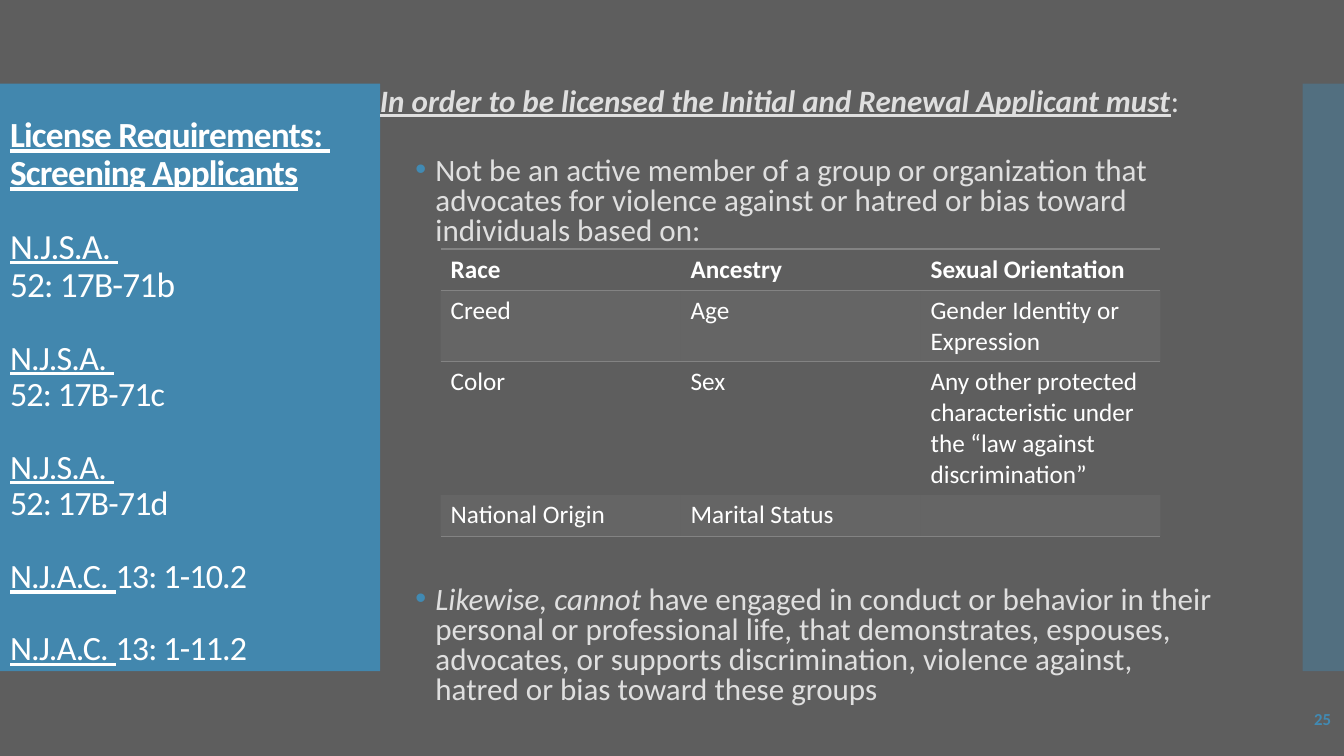
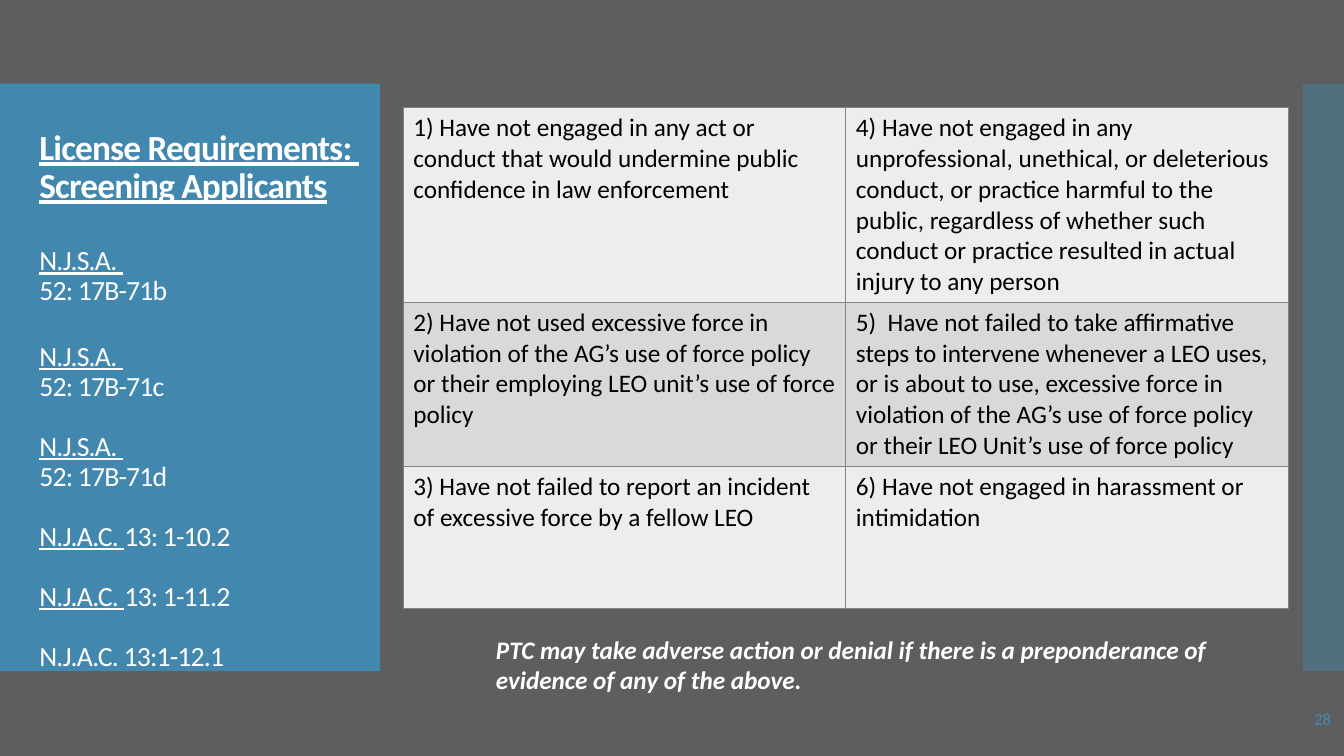
from lxml import etree
from pptx import Presentation
from pptx.dml.color import RGBColor
from pptx.enum import shapes, text
from pptx.oxml.ns import qn
from pptx.util import Inches, Pt

FONT = "Calibri"
GREY = RGBColor(0x5E, 0x5E, 0x5E)
BLUE = RGBColor(0x41, 0x8A, 0xB3)
WHITE = RGBColor(0xFF, 0xFF, 0xFF)
BLACK = RGBColor(0, 0, 0)
PALE = RGBColor(0xDF, 0xDF, 0xDF)
RULE = RGBColor(0x83, 0x83, 0x83)
CELL_LIGHT = RGBColor(0xED, 0xED, 0xED)
CELL_DARK = RGBColor(0xD9, 0xD9, 0xD9)
NO_TABLE_STYLE = "{2D5ABB26-0587-4C30-8999-92F81FD0307C}"

BAND_TOP, BAND_HEIGHT = 0.83, 5.83
BODY_SIZE = 22.2
TITLE_SIZE = 25.2

CITATIONS = [
    ("N.J.S.A. ", "52: 17B-71b"),
    ("N.J.S.A. ", "52: 17B-71c"),
    ("N.J.S.A. ", "52: 17B-71d"),
    ("N.J.A.C. ", "13: 1-10.2"),
    ("N.J.A.C. ", "13: 1-11.2"),
]

BIAS_GROUNDS = [
    ["Race", "Ancestry", "Sexual Orientation"],
    ["Creed", "Age", "Gender Identity or Expression"],
    ["Color", "Sex", "Any other protected characteristic under the “law against discrimination”"],
    ["National Origin", "Marital Status", ""],
]

CONDUCT = [
    ["1) Have not engaged in any act or conduct that would undermine public "
     "confidence in law enforcement",
     "4) Have not engaged in any unprofessional, unethical, or deleterious conduct, "
     "or practice harmful to the public, regardless of whether such conduct or "
     "practice resulted in actual injury to any person"],
    ["2) Have not used excessive force in violation of the AG’s use of force policy "
     "or their employing LEO unit’s use of force policy",
     "5)  Have not failed to take affirmative steps to intervene whenever a LEO uses, "
     "or is about to use, excessive force in violation of the AG’s use of force "
     "policy or their LEO Unit’s use of force policy"],
    ["3) Have not failed to report an incident of excessive force by a fellow LEO",
     "6) Have not engaged in harassment or intimidation"],
]


def add_run(paragraph, words, size, color, bold=False, italic=False, underline=False):
    run = paragraph.add_run()
    run.text = words
    font = run.font
    font.name, font.size, font.color.rgb = FONT, Pt(size), color
    font.bold, font.italic, font.underline = bold, italic, underline
    return run


def set_alpha(properties, percent):
    """Make the first colour inside the given properties element translucent."""
    color = properties.find(".//" + qn("a:srgbClr"))
    etree.SubElement(color, qn("a:alpha")).set("val", str(percent * 1000))


def add_text_box(slide, box, flush=False):
    frame = slide.shapes.add_textbox(*map(Inches, box)).text_frame
    frame.word_wrap = True
    if flush:
        frame.margin_top = frame.margin_bottom = 0
    return frame


def add_band(slide, left, width, opacity):
    band = slide.shapes.add_shape(
        shapes.MSO_SHAPE.RECTANGLE,
        *map(Inches, (left, BAND_TOP, width, BAND_HEIGHT)))
    band.shadow.inherit = False
    band.fill.solid()
    band.fill.fore_color.rgb = BLUE
    set_alpha(band._element.spPr, opacity)
    band.line.fill.background()
    slide.shapes._spTree.insert(2, band._element)  # behind the title


def add_framed_slide(deck, number, bold_number):
    """Add a title-only slide with both side bands and its page number."""
    slide = deck.slides.add_slide(deck.slide_layouts[5])
    add_band(slide, 0, 3.77, 95)
    add_band(slide, 12.92, 0.42, 40)
    paragraph = add_text_box(slide, (12.5, 6.98, 0.8, 0.35)).paragraphs[0]
    paragraph.alignment = text.PP_ALIGN.RIGHT
    add_run(paragraph, number, 12, BLUE, bold=bold_number)
    return slide


def fill_title(slide, box, citations, sizes, gaps):
    """Write the heading and, below it, each citation with its size and gap."""
    title = slide.shapes.title
    title.left, title.top, title.width, title.height = map(Inches, box)
    frame = title.text_frame
    frame.word_wrap = True
    frame.auto_size = text.MSO_AUTO_SIZE.NONE
    frame.vertical_anchor = text.MSO_ANCHOR.TOP
    frame.margin_top = frame.margin_bottom = 0

    def add_line(paragraph, gap, *pieces):
        paragraph.alignment = text.PP_ALIGN.LEFT
        paragraph.line_spacing = 0.9
        paragraph.space_before = Pt(gap)
        for words, size, bold, underline in pieces:
            if words == "\n":
                paragraph.add_line_break()
                continue
            run = add_run(paragraph, words, size, WHITE, bold, underline=underline)
            run.font._element.set("spc", "-60")

    add_line(frame.paragraphs[0], 0,
             ("License Requirements: ", TITLE_SIZE, True, True),
             ("\n", TITLE_SIZE, True, True),
             ("Screening Applicants", TITLE_SIZE, True, True))
    for (code, section), size, gap in zip(citations, sizes, gaps):
        pieces = [(code, size, False, True), (section, size, False, False)]
        if code.startswith("N.J.S.A."):
            pieces.insert(1, ("\n", size, False, False))
        add_line(frame.add_paragraph(), gap, *[piece for piece in pieces if piece[0]])


def set_borders(cell, sides):
    """Draw 1 pt rules on the given sides, listed in the order L, R, T, B."""
    properties = cell._tc.get_or_add_tcPr()
    for position, side in enumerate(sides):
        line = etree.Element(qn("a:ln" + side), w=str(Pt(1)))
        fill = etree.SubElement(line, qn("a:solidFill"))
        etree.SubElement(fill, qn("a:srgbClr")).set("val", str(RULE))
        properties.insert(position, line)


def add_grid(slide, left, top, column_width, row_heights, rows, color, style_cell):
    """Add a plain table; style_cell(cell, row) returns whether its text is bold."""
    columns = len(rows[0])
    table = slide.shapes.add_table(
        len(rows), columns, Inches(left), Inches(top),
        Inches(column_width * columns), Inches(sum(row_heights))).table
    table.first_row = table.horz_banding = False
    table._tbl.tblPr.find(qn("a:tableStyleId")).text = NO_TABLE_STYLE
    for column in table.columns:
        column.width = Inches(column_width)
    for r, (height, row) in enumerate(zip(row_heights, rows)):
        table.rows[r].height = Inches(height)
        for c, words in enumerate(row):
            cell = table.cell(r, c)
            bold = style_cell(cell, r)
            if words:
                add_run(cell.text_frame.paragraphs[0], words, 18, color, bold)


def style_grounds_cell(cell, row):
    if row % 2:
        cell.fill.solid()
        cell.fill.fore_color.rgb = RULE
        set_alpha(cell._tc.tcPr, 20)
    else:
        cell.fill.background()
    set_borders(cell, {0: "TB", 1: "T", 3: "B"}.get(row, ""))
    return row == 0


def style_conduct_cell(cell, row):
    cell.fill.solid()
    cell.fill.fore_color.rgb = CELL_DARK if row % 2 else CELL_LIGHT
    set_borders(cell, "LRTB")
    return False


def format_body(paragraph, margin, hanging=0.0, gap=0):
    paragraph.line_spacing = 0.8
    paragraph.space_before = Pt(gap)
    properties = paragraph._p.get_or_add_pPr()
    properties.set("marL", str(Inches(margin)))
    properties.set("indent", str(-Inches(hanging)))
    if hanging:
        color = etree.SubElement(properties, qn("a:buClr"))
        etree.SubElement(color, qn("a:srgbClr")).set("val", str(BLUE))
        etree.SubElement(properties, qn("a:buFont")).set("typeface", "Arial")
        etree.SubElement(properties, qn("a:buChar")).set("char", "•")


def add_requirements(slide, left, width):
    """Place the heading and the two bullets that surround the table."""
    opening = add_text_box(slide, (left, 0.88, width, 1.6), flush=True)
    heading = opening.paragraphs[0]
    format_body(heading, 0.2)
    add_run(heading, "In order to be licensed the Initial and Renewal Applicant must",
            BODY_SIZE, PALE, True, True, True)
    add_run(heading, ":", BODY_SIZE, PALE)
    membership = opening.add_paragraph()
    format_body(membership, 0.75, 0.2, 28)
    add_run(membership,
            "Not be an active member of a group or organization that advocates for "
            "violence against or hatred or bias toward individuals based on:",
            BODY_SIZE, PALE)

    closing = add_text_box(slide, (left, 5.82, width, 1.25), flush=True)
    behavior = closing.paragraphs[0]
    format_body(behavior, 0.75, 0.2)
    add_run(behavior, "Likewise, cannot ", BODY_SIZE, PALE, italic=True)
    add_run(behavior,
            "have engaged in conduct or behavior in their personal or professional "
            "life, that demonstrates, espouses, advocates, or supports "
            "discrimination, violence against, hatred or bias toward these groups",
            BODY_SIZE, PALE)


def build_bias_slide(deck):
    slide = add_framed_slide(deck, "25", True)
    fill_title(slide, (0, 1.16, 3.64, 5.5), CITATIONS,
               [25.2] + [24.3] * 4, [25.5] * 5)
    add_requirements(slide, 3.47, 8.75)
    add_grid(slide, 4.37, 2.47, 2.38, [0.41, 0.71, 1.32, 0.41],
             BIAS_GROUNDS, WHITE, style_grounds_cell)


def build_conduct_slide(deck):
    slide = add_framed_slide(deck, "28", False)
    fill_title(slide, (0.29, 1.29, 3.44, 5.37),
               CITATIONS + [("", "N.J.A.C. 13:1-12.1")],
               [19.8] * 6, [29, 25.5] + [21.5] * 4)
    add_grid(slide, 4, 1.07, 4.39, [1.93, 1.63, 1.41],
             CONDUCT, BLACK, style_conduct_cell)
    note = add_text_box(slide, (4.82, 6.24, 7.64, 0.71))
    add_run(note.paragraphs[0],
            "PTC may take adverse action or denial if there is a preponderance of "
            "evidence of any of the above.", 18, WHITE, bold=True, italic=True)


def main():
    deck = Presentation()
    deck.slide_width, deck.slide_height = Inches(13.33), Inches(7.5)
    background = deck.slide_master.background.fill
    background.solid()
    background.fore_color.rgb = GREY
    build_bias_slide(deck)
    build_conduct_slide(deck)
    deck.save("out.pptx")


if __name__ == "__main__":
    main()
